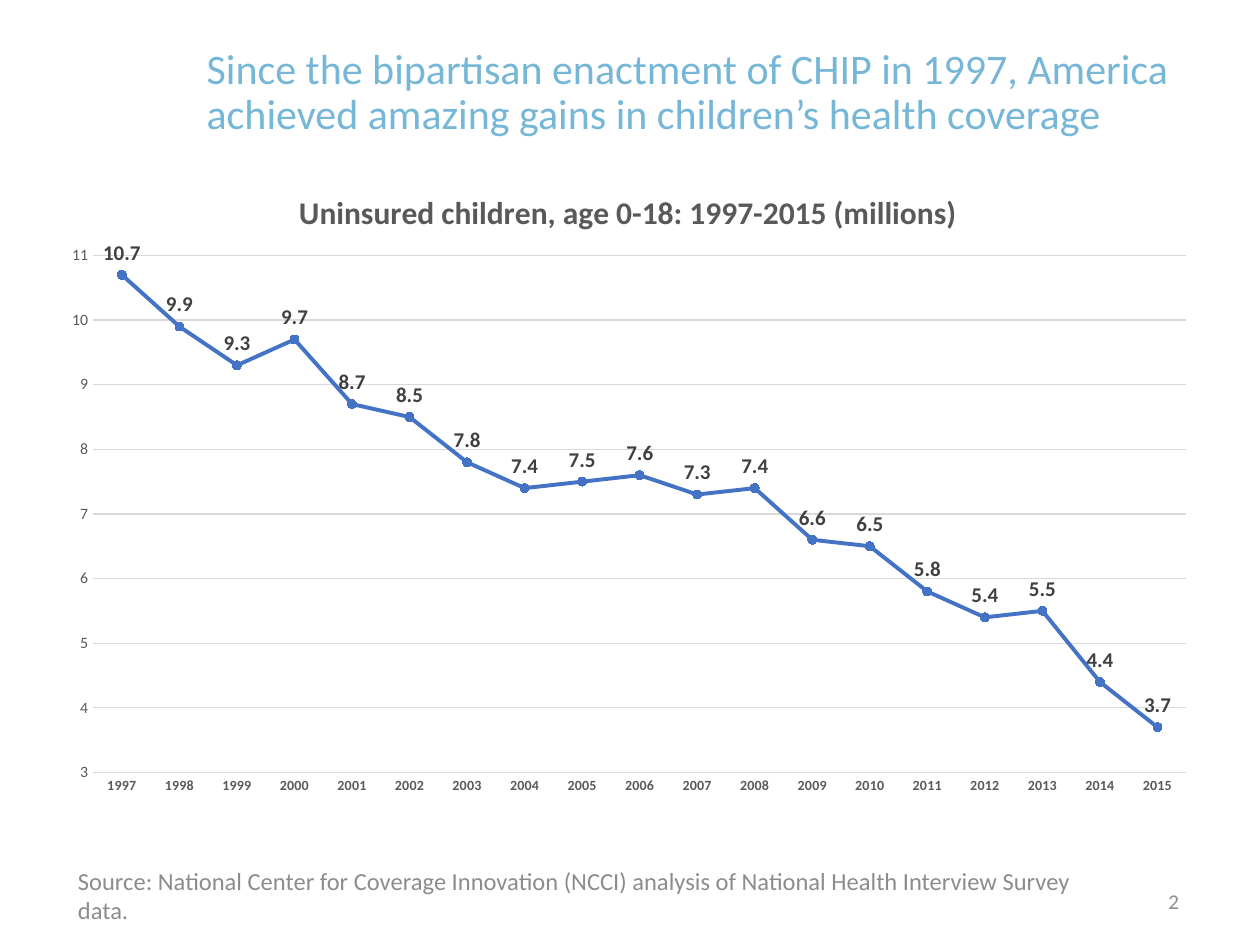
from typing import NamedTuple

from pptx import Presentation
from pptx.chart.data import CategoryChartData
from pptx.dml.color import RGBColor
from pptx.enum.chart import (XL_CHART_TYPE, XL_LABEL_POSITION,
                             XL_MARKER_STYLE, XL_TICK_MARK)
from pptx.enum.text import MSO_ANCHOR, MSO_AUTO_SIZE, PP_ALIGN
from pptx.oxml import parse_xml
from pptx.oxml.ns import nsdecls
from pptx.util import Inches, Pt

FONT = "Calibri"
SKY = RGBColor(0x76, 0xB6, 0xD7)
GRAY = RGBColor(0x8C, 0x8C, 0x8C)
BLUE = RGBColor(0x44, 0x72, 0xC4)
DARK = RGBColor(0x40, 0x40, 0x40)
SLATE = RGBColor(0x59, 0x59, 0x59)
PALE = RGBColor(0xD9, 0xD9, 0xD9)
BLACK = RGBColor(0, 0, 0)

WIDE, HIGH = Inches(10), Inches(7.5)
FIRST = 1997
COUNTS = (10.7, 9.9, 9.3, 9.7, 8.7, 8.5, 7.8, 7.4, 7.5, 7.6,
          7.3, 7.4, 6.6, 6.5, 5.8, 5.4, 5.5, 4.4, 3.7)


class Area(NamedTuple):
    """A box on the slide, in inches."""
    left: float
    top: float
    width: float
    height: float

    def emu(self) -> list:
        return [Inches(side) for side in self]


class Note(NamedTuple):
    area: Area
    text: str
    size: int
    color: RGBColor
    align: PP_ALIGN = PP_ALIGN.LEFT


HEAD = Note(Area(1.54, 0.26, 7.94, 0.96),
            "Since the bipartisan enactment of CHIP in 1997, America "
            "achieved amazing gains in children’s health coverage", 24, SKY)
FOOT = (
    Note(Area(0.52, 6.86, 8.42, 0.49),
         "Source: National Center for Coverage Innovation (NCCI) analysis of "
         "National Health Interview Survey data.", 14, GRAY),
    Note(Area(9.03, 6.95, 0.57, 0.4), "2", 12, GRAY, PP_ALIGN.CENTER),
)
GRAPH = Area(0.37, 1.31, 9.23, 5.13)
PLOT = {"x": 0.04, "y": 0.14, "w": 0.94, "h": 0.8}  # shares of the chart


def style(font, size: float, color: RGBColor, bold: bool = False) -> None:
    font.name, font.size, font.bold = FONT, Pt(size), bold
    font.color.rgb = color


def write(shape, note: Note) -> None:
    frame = shape.text_frame
    frame.text = note.text
    frame.word_wrap = True
    frame.auto_size = MSO_AUTO_SIZE.NONE
    frame.vertical_anchor = MSO_ANCHOR.MIDDLE
    line = frame.paragraphs[0]
    line.alignment = note.align
    style(line.runs[0].font, note.size, note.color)


def rule(line, color: RGBColor, width: float) -> None:
    line.color.rgb = color
    line.width = Pt(width)


def place(chart) -> None:
    """Fix the inner plot area within the chart."""
    plot = chart.element.xpath("c:chart/c:plotArea")[0]
    for old in plot.xpath("c:layout"):
        plot.remove(old)
    sides = "".join(f'<c:{key} val="{val}"/>' for key, val in PLOT.items())
    plot.insert(0, parse_xml(
        f'<c:layout {nsdecls("c")}><c:manualLayout>'
        '<c:layoutTarget val="inner"/><c:xMode val="edge"/>'
        f'<c:yMode val="edge"/>{sides}</c:manualLayout></c:layout>'))


def graph(slide) -> None:
    data = CategoryChartData(number_format="0.0")
    data.categories = [str(FIRST + step) for step in range(len(COUNTS))]
    data.add_series("Series 1", COUNTS)
    chart = slide.shapes.add_chart(
        XL_CHART_TYPE.LINE_MARKERS, *GRAPH.emu(), data).chart
    style(chart.font, 10, BLACK)
    chart.has_legend = False
    place(chart)

    # Chart title
    chart.has_title = True
    title = chart.chart_title.text_frame
    title.text = "Uninsured children, age 0-18: 1997-2015 (millions)"
    style(title.paragraphs[0].runs[0].font, 18, SLATE, True)

    # Axes
    years, scale = chart.category_axis, chart.value_axis
    for axis in (years, scale):
        axis.major_tick_mark = axis.minor_tick_mark = XL_TICK_MARK.NONE
    style(years.tick_labels.font, 8, SLATE, True)
    rule(years.format.line, PALE, 0.75)
    style(scale.tick_labels.font, 9, SLATE)
    scale.tick_labels.number_format = "#,##0"
    scale.tick_labels.number_format_is_linked = False
    scale.minimum_scale, scale.maximum_scale, scale.major_unit = 3, 11, 1
    scale.format.line.fill.background()
    rule(scale.major_gridlines.format.line, PALE, 0.75)

    # Line and markers
    chart.plots[0].vary_by_categories = False
    trend = chart.plots[0].series[0]
    trend.smooth = False
    rule(trend.format.line, BLUE, 2.25)
    mark = trend.marker
    mark.style, mark.size = XL_MARKER_STYLE.CIRCLE, 5
    mark.format.fill.solid()
    mark.format.fill.fore_color.rgb = BLUE
    rule(mark.format.line, BLUE, 0.75)

    # Value labels
    tags = trend.data_labels
    tags.show_value = True
    tags.position = XL_LABEL_POSITION.ABOVE
    tags.number_format = "0.0"
    tags.number_format_is_linked = False
    style(tags.font, 12, DARK, True)


def main() -> None:
    deck = Presentation()
    deck.slide_width, deck.slide_height = WIDE, HIGH
    slide = deck.slides.add_slide(deck.slide_layouts.get_by_name("Title Only"))

    # Title
    title = slide.shapes.title
    title.left, title.top, title.width, title.height = HEAD.area.emu()
    write(title, HEAD)
    title.text_frame.paragraphs[0].line_spacing = 0.9

    # Source and page number
    for note in FOOT:
        write(slide.shapes.add_textbox(*note.area.emu()), note)

    graph(slide)
    deck.save("out.pptx")


if __name__ == "__main__":
    main()
